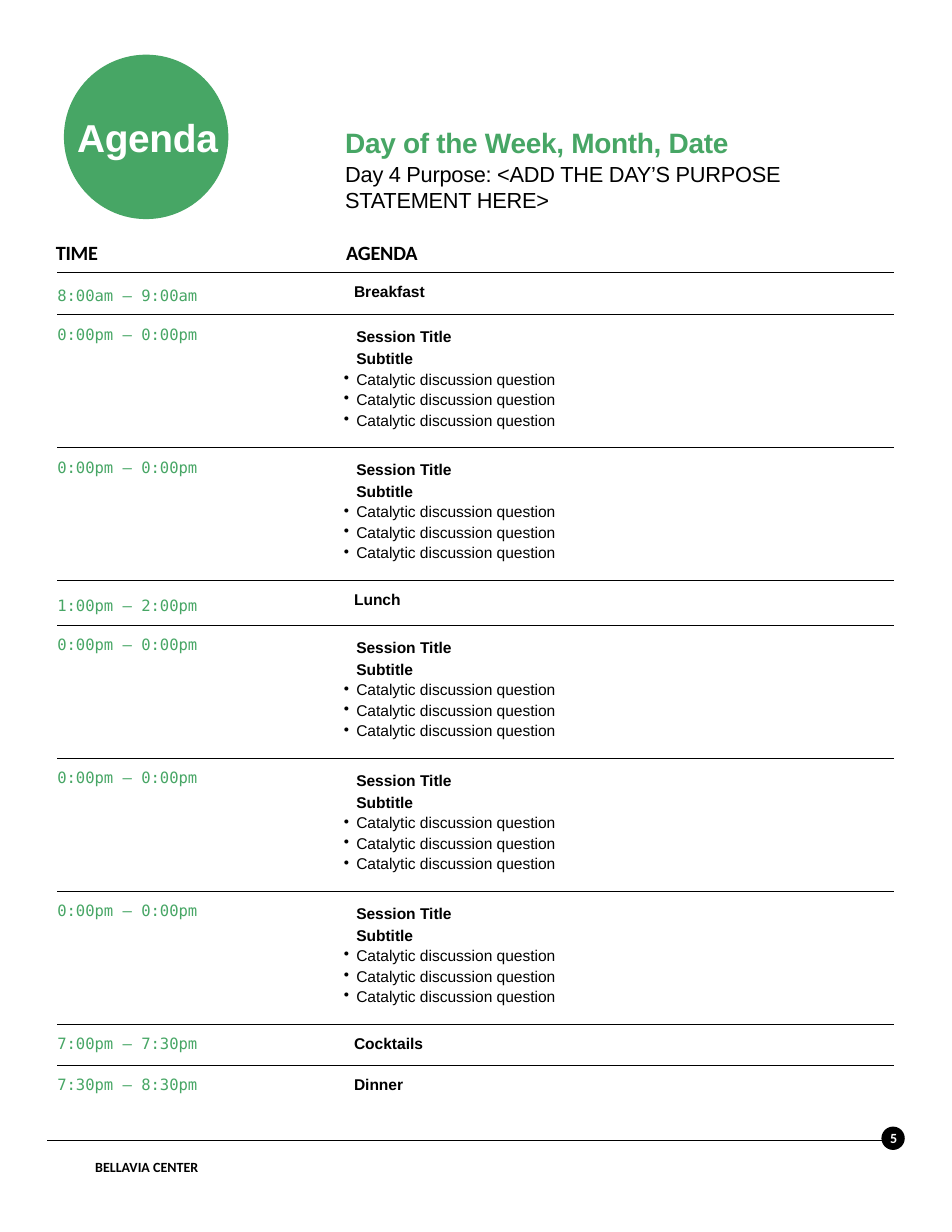
from dataclasses import dataclass
from typing import Optional

from lxml import etree
from pptx import Presentation
from pptx import util as u
from pptx.dml.color import RGBColor
from pptx.enum import shapes, text
from pptx.oxml.ns import qn


@dataclass(frozen=True)
class Theme:
    green: str = "47A665"
    black: str = "000000"
    white: str = "FFFFFF"
    sans: str = "Arial"
    label: str = "Calibri"
    mono: str = "DejaVu Sans Mono"
    title: float = 25
    day: float = 18
    purpose: float = 14
    heading: float = 13
    body: float = 10
    footer: float = 9
    rule: float = 0.5


THEME = Theme()


@dataclass(frozen=True)
class Line:
    """One paragraph; indents in cm, spacing and tracking in points."""
    words: str
    size: float
    font: str
    color: str
    bold: bool = False
    margin: float = 0
    before: float = 0
    leading: Optional[float] = None
    tracking: float = 0
    bullet: bool = False


@dataclass(frozen=True)
class Area:
    left: float
    top: float
    width: float
    height: float

    def lengths(self) -> tuple:
        return tuple(u.Cm(v) for v in (self.left, self.top, self.width, self.height))


@dataclass(frozen=True)
class Entry:
    time: str
    height: float
    event: str = ""  # an empty event is a discussion session
    middle: bool = False
    time_bottom: float = 0.13


SESSION = Entry("0:00pm – 0:00pm", 3.01)
ENTRIES = [
    Entry("8:00am – 9:00am", 0.97, "Breakfast", middle=True),
    SESSION,
    SESSION,
    Entry("1:00pm – 2:00pm", 1.02, "Lunch", middle=True),
    SESSION,
    SESSION,
    SESSION,
    Entry("7:00pm – 7:30pm", 0.93, "Cocktails", time_bottom=0.25),
    Entry("7:30pm – 8:30pm", 0.95, "Dinner", time_bottom=0.25),
]


def body_line(words: str, bold: bool = False, **extra) -> Line:
    return Line(words, THEME.body, THEME.sans, THEME.black, bold, **extra)


SESSION_LINES = [
    body_line("Session Title", True, margin=0.3, leading=1.17),
    body_line("Subtitle", True, margin=0.3, before=1, leading=1.17),
] + [body_line("Catalytic discussion question", margin=0.3, before=2, bullet=True)] * 3


def add_bullet(para) -> None:
    props = para._p.get_or_add_pPr()
    props.set("indent", str(u.Cm(-0.28)))
    etree.SubElement(props, qn("a:buChar")).set("char", "•")
    tabs = etree.SubElement(props, qn("a:tabLst"))
    etree.SubElement(tabs, qn("a:tab"), pos=str(u.Cm(0.3)), algn="l")


def write(frame, lines: list) -> None:
    for index, line in enumerate(lines):
        para = frame.paragraphs[0] if index == 0 else frame.add_paragraph()
        span = para.add_run()
        span.text = line.words
        if line.tracking:
            span._r.get_or_add_rPr().set("spc", str(round(line.tracking * 100)))
        para._p.get_or_add_pPr().set("marL", str(u.Cm(line.margin)))
        para.space_before = u.Pt(line.before)
        if line.leading:
            para.line_spacing = line.leading
        if line.bullet:
            add_bullet(para)
        para.font.size = u.Pt(line.size)
        para.font.name = line.font
        para.font.bold = line.bold
        para.font.color.rgb = RGBColor.from_string(line.color)


def fill_box(box, lines: list) -> None:
    frame = box.text_frame
    frame.margin_left = frame.margin_right = frame.margin_bottom = 0
    frame.margin_top = u.Cm(0.03)
    frame.word_wrap = True
    frame.auto_size = text.MSO_AUTO_SIZE.SHAPE_TO_FIT_TEXT
    frame.vertical_anchor = text.MSO_ANCHOR.TOP
    write(frame, lines)


def add_text(page, area: Area, *lines: Line) -> None:
    fill_box(page.shapes.add_textbox(*area.lengths()), list(lines))


def add_disc(page, area: Area, color: str) -> None:
    disc = page.shapes.add_shape(shapes.MSO_SHAPE.OVAL, *area.lengths())
    disc.shadow.inherit = False
    disc.fill.solid()
    disc.fill.fore_color.rgb = RGBColor.from_string(color)
    disc.line.fill.background()


def add_rule(page, left: float, right: float, top: float) -> None:
    rule = page.shapes.add_connector(
        shapes.MSO_CONNECTOR.STRAIGHT, u.Cm(left), u.Cm(top), u.Cm(right), u.Cm(top))
    rule.line.color.rgb = RGBColor.from_string(THEME.black)
    rule.line.width = u.Pt(0.25)
    etree.SubElement(rule._element.spPr, qn("a:effectLst"))


def style_cell(cell, sides: list, margins: tuple) -> None:
    props = cell._tc.get_or_add_tcPr()
    for side in sides:
        border = etree.SubElement(props, qn(f"a:{side}"), w=str(u.Pt(THEME.rule)))
        fill = etree.SubElement(border, qn("a:solidFill"))
        etree.SubElement(fill, qn("a:srgbClr"), val=THEME.black)
    cell.fill.background()
    cell.margin_left, cell.margin_top, cell.margin_right, cell.margin_bottom = map(u.Cm, margins)


def add_schedule(page, left: float, top: float, widths: tuple) -> None:
    area = Area(left, top, sum(widths), sum(entry.height for entry in ENTRIES))
    table = page.shapes.add_table(len(ENTRIES), len(widths), *area.lengths()).table
    table.first_row = table.horz_banding = False
    # "No Style, No Grid"
    table._tbl.tblPr.find(qn("a:tableStyleId")).text = "{2D5ABB26-0587-4C30-8999-92F81FD0307C}"
    for column, width in zip(table.columns, widths):
        column.width = u.Cm(width)
    for index, entry in enumerate(ENTRIES):
        table.rows[index].height = u.Cm(entry.height)
        sides = ["lnT"] if entry is ENTRIES[-1] else ["lnT", "lnB"]
        when, what = table.cell(index, 0), table.cell(index, 1)
        style_cell(when, sides, (0, 0.25, 0, entry.time_bottom))
        style_cell(what, sides, (0.25 if entry.event else 0, 0.25, 0.25, 0.25))
        if entry.middle:
            when.vertical_anchor = text.MSO_ANCHOR.MIDDLE
        write(when.text_frame, [Line(entry.time, THEME.body, THEME.mono, THEME.green)])
        write(what.text_frame, [body_line(entry.event, True)] if entry.event else SESSION_LINES)


def label(words: str, size: float, color: str = THEME.black, margin: float = 0.03,
          tracking: float = 0) -> Line:
    return Line(words, size, THEME.label, color, True, margin, tracking=tracking)


def main() -> None:
    deck = Presentation()
    deck.slide_width, deck.slide_height = u.Cm(21.59), u.Cm(27.94)
    page = deck.slides.add_slide(deck.slide_layouts[5])

    # Title on its green disc
    add_disc(page, Area(1.45, 1.24, 3.73, 3.73), THEME.green)
    title = page.shapes.title
    title.left, title.top, title.width, title.height = Area(1.63, 2.54, 3.4, 1.12).lengths()
    page.shapes._spTree.append(title._element)
    fill_box(title, [Line("Agenda", THEME.title, THEME.sans, THEME.white, True, 0.03,
                          tracking=-0.2)])
    title.text_frame.paragraphs[0].alignment = text.PP_ALIGN.CENTER

    # Day and purpose
    add_text(page, Area(7.8, 2.82, 11.25, 2.03),
             Line("Day of the Week, Month, Date", THEME.day, THEME.sans, THEME.green, True,
                  0.03, tracking=-0.2),
             Line("Day 4 Purpose: <ADD THE DAY’S PURPOSE STATEMENT HERE>", THEME.purpose,
                  THEME.sans, THEME.black, margin=0.03, before=1, tracking=-0.2))

    # Schedule with its column headings
    add_text(page, Area(1.24, 5.41, 1.17, 0.61), label("TIME", THEME.heading, tracking=-0.2))
    add_text(page, Area(7.82, 5.41, 1.73, 0.61), label("AGENDA", THEME.heading, tracking=-0.1))
    add_schedule(page, 1.3, 6.17, (6.48, 12.5))

    # Footer with page number
    add_rule(page, 1.07, 20.04, 25.86)
    add_text(page, Area(2.13, 26.24, 2.95, 0.48), label("BELLAVIA CENTER", THEME.footer))
    add_disc(page, Area(19.99, 25.55, 0.53, 0.53), THEME.black)
    add_text(page, Area(20.09, 25.58, 0.43, 0.41),
             label("5", THEME.footer, THEME.white, margin=0.1))

    deck.save("out.pptx")


if __name__ == "__main__":
    main()
